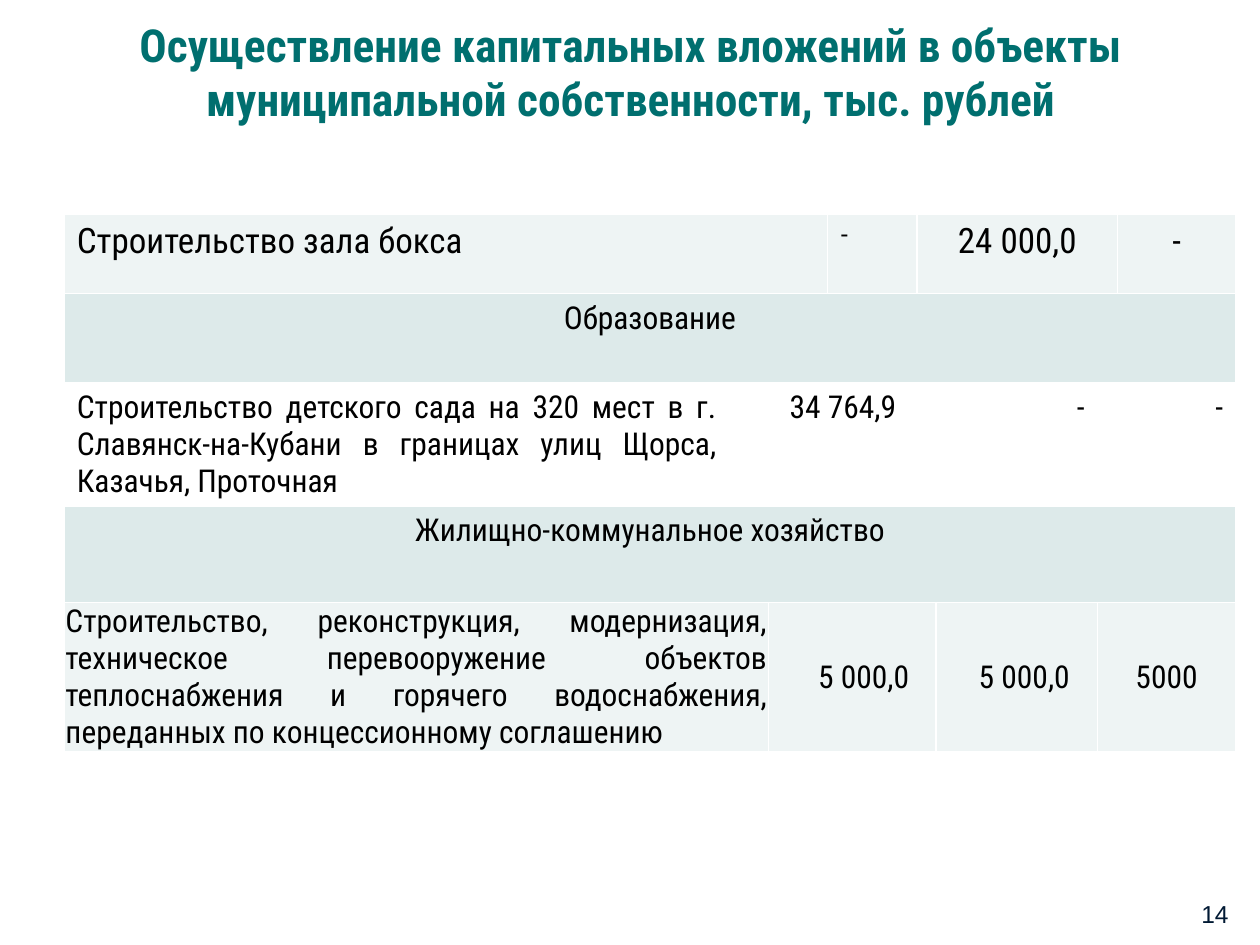
from pptx import Presentation
from pptx.dml.color import RGBColor
from pptx.enum.text import MSO_ANCHOR as Anchor, MSO_AUTO_SIZE as AutoSize, PP_ALIGN as Align
from pptx.util import Inches, Pt

THEME = {
    "text": "Roboto Condensed", "plain": "Arial",
    "title": "006F6F", "ink": "000000", "number": "001933",
    "light": "EEF4F4", "band": "DDEAEA", "white": "FFFFFF",
    "title_size": 26, "large": 20, "body": 18, "small": 14,
}

TITLE = "Осуществление капитальных вложений в объекты муниципальной собственности, тыс. рублей"
PAGE_NUMBER = "14"
COLUMNS = [5.28, 0.31, 0.47, 0.71, 0.15, 0.16, 1.12, 0.16, 0.94]
LEFT, CENTER, RIGHT, JUSTIFY = Align.LEFT, Align.CENTER, Align.RIGHT, Align.JUSTIFY

# Each row: height, fill, size, tight margins, cells as (text, columns spanned, alignment)
ROWS = [
    (0.63, "light", "large", False, [
        ("Строительство зала бокса", 3, JUSTIFY), ("-", 1, LEFT),
        ("24 000,0", 4, CENTER), ("-", 1, CENTER)]),
    (0.71, "band", "body", False, [("Образование", 9, CENTER)]),
    (0.98, "white", "body", False, [
        ("Строительство детского сада на 320 мест в г. Славянск-на-Кубани "
         "в границах улиц Щорса, Казачья, Проточная", 1, JUSTIFY),
        ("34 764,9", 5, CENTER), ("-", 1, RIGHT), ("-", 2, RIGHT)]),
    (0.76, "band", "body", False, [("Жилищно-коммунальное хозяйство", 9, CENTER)]),
    (1.18, "light", "body", True, [
        ("Строительство, реконструкция, модернизация, техническое перевооружение "
         "объектов теплоснабжения и горячего водоснабжения, переданных "
         "по концессионному соглашению", 2, JUSTIFY),
        ("5 000,0", 3, CENTER), ("5 000,0", 2, CENTER), ("5000", 2, CENTER)]),
]
# Extra left margin that shifts a centred value, by (row, column)
SHIFTS = {(4, 2): 0.18, (4, 5): 0.12}
# The one cell set in the plain small face
SMALL_CELL = (0, 3)


def write(frame, text, align, face, size, color, bold=False):
    frame.word_wrap = True
    para = frame.paragraphs[0]
    para.text = text
    para.alignment = align
    font = para.font
    font.name, font.size, font.bold = THEME[face], Pt(THEME[size]), bold
    font.color.rgb = RGBColor.from_string(THEME[color])


def place(box, left, top, width, height):
    box.left, box.top = Inches(left), Inches(top)
    box.width, box.height = Inches(width), Inches(height)


deck = Presentation()
deck.slide_width, deck.slide_height = Inches(10), Inches(7.5)
page = deck.slides.add_slide(deck.slide_layouts[5])

# Title
title = page.shapes.title
place(title, 0.51, 0.21, 9, 0.71)
title.text_frame.auto_size = AutoSize.NONE
title.text_frame.vertical_anchor = Anchor.MIDDLE
write(title.text_frame, TITLE, CENTER, "text", "title_size", "title", bold=True)

# Table of investments
table = page.shapes.add_table(
    len(ROWS), len(COLUMNS), Inches(0.51), Inches(1.7),
    Inches(sum(COLUMNS)), Inches(sum(row[0] for row in ROWS))).table
table.first_row = table.horz_banding = False
for column, width in zip(table.columns, COLUMNS):
    column.width = Inches(width)

for row, (height, fill, size, tight, cells) in enumerate(ROWS):
    table.rows[row].height = Inches(height)
    column = 0
    for text, span, align in cells:
        cell = table.cell(row, column)
        if span > 1:
            cell.merge(table.cell(row, column + span - 1))
        cell.fill.solid()
        cell.fill.fore_color.rgb = RGBColor.from_string(THEME[fill])
        if tight:
            cell.margin_left = Inches(0.01 + SHIFTS.get((row, column), 0))
            cell.margin_right = cell.margin_top = Inches(0.01)
            cell.margin_bottom = 0
            cell.vertical_anchor = Anchor.BOTTOM if column == 0 else Anchor.MIDDLE
        face, type_size = ("plain", "small") if (row, column) == SMALL_CELL else ("text", size)
        write(cell.text_frame, text, align, face, type_size, "ink")
        column += span

# Page number
number = page.shapes.add_textbox(Inches(7.52), Inches(6.9), Inches(2.33), Inches(0.52))
number.text_frame.vertical_anchor = Anchor.BOTTOM
write(number.text_frame, PAGE_NUMBER, RIGHT, "plain", "small", "number")

deck.save("out.pptx")
